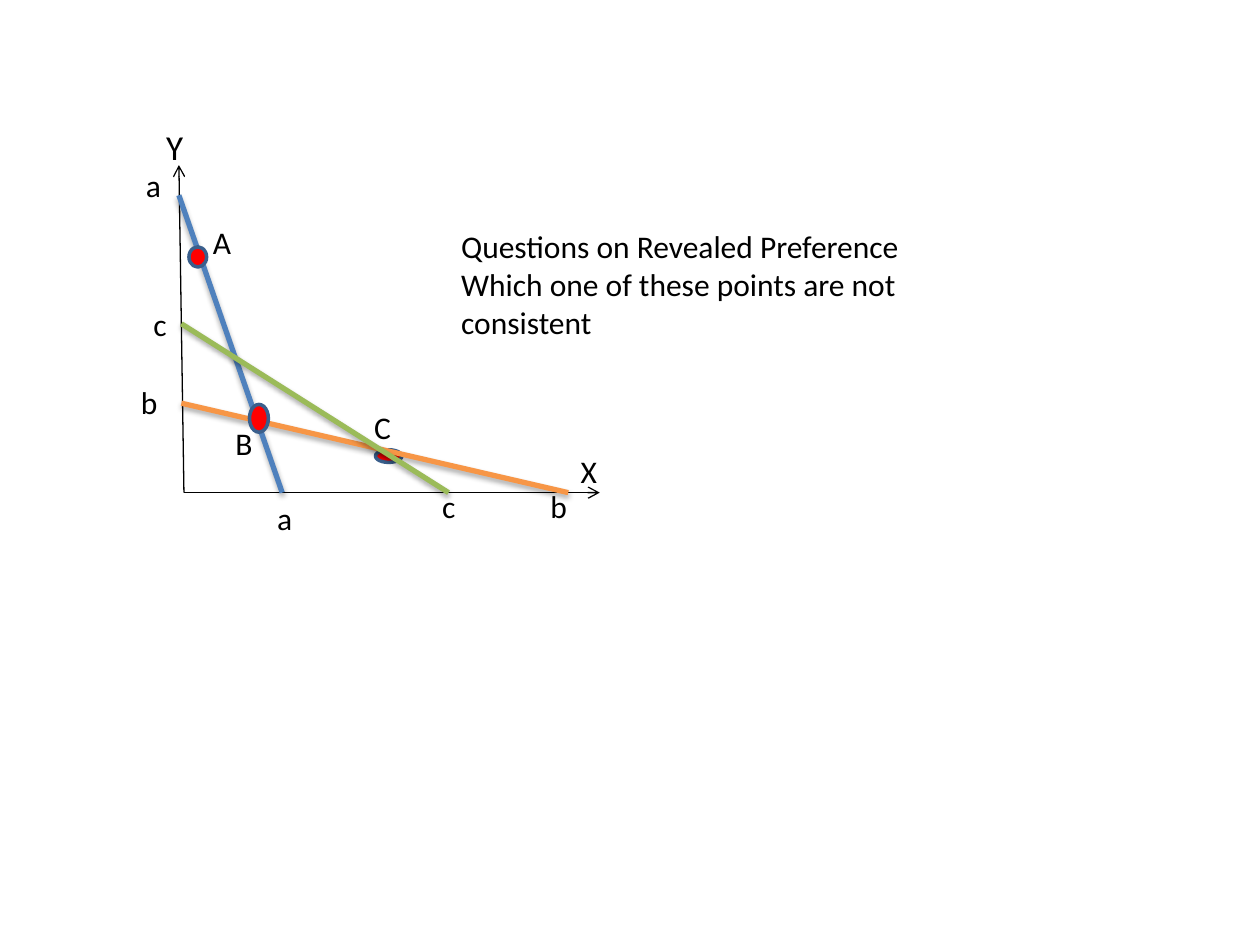
from lxml import etree
from pptx import Presentation
from pptx.dml.color import RGBColor
from pptx.enum.shapes import MSO_CONNECTOR, MSO_SHAPE
from pptx.enum.text import MSO_ANCHOR, MSO_AUTO_SIZE, PP_ALIGN
from pptx.oxml.ns import qn
from pptx.util import Inches, Pt

STRAIGHT = MSO_CONNECTOR.STRAIGHT
OVAL = MSO_SHAPE.OVAL
MIDDLE = MSO_ANCHOR.MIDDLE
NO_AUTOFIT = MSO_AUTO_SIZE.NONE
LEFT = PP_ALIGN.LEFT

FONT = "Calibri"
BLACK = "000000"
RED = "FF0000"
DOT_OUTLINE = "3A5F8C"

# Positions on the graph are inches from its top-left corner
BASE = 2.96
ORIGIN = (0.46, BASE)
AXIS_TIPS = [(0.42, 0.36), (3.76, BASE)]
BUDGET_LINES = [  # start, end, colour
    ((0.42, 0.6), (1.24, BASE), "4F81BD"),
    ((0.44, 2.25), (3.51, BASE), "F79646"),
    ((0.44, 1.62), (2.56, BASE), "9BBB59"),
]
POINT_A = (0.5, 1.01, 0.14, 0.16)
POINT_B = (0.98, 2.26, 0.15, 0.22)
POINT_C = (1.98, 2.62, 0.21, 0.1)
LABELS = [  # text, left, top, width, size
    ("Y", 0.22, 0, 0.55, 20),
    ("X", 3.51, 2.59, 0.51, 18),
    ("A", 0.59, 0.77, 0.55, 18),
    ("B", 0.77, 2.37, 0.41, 18),
    ("C", 1.87, 2.24, 0.55, 18),
    ("a", 0.06, 0.32, 0.31, 18),
    ("a", 1.1, BASE, 0.31, 18),
    ("b", 0.02, 2.04, 0.63, 18),
    ("b", 3.27, 2.87, 0.47, 18),
    ("c", 0.12, 1.42, 0.47, 18),
    ("c", 2.41, 2.87, 0.31, 18),
]


def colour(hex_text):
    return RGBColor.from_string(hex_text)


def style_text(para, size):
    para.alignment = LEFT
    para.font.name = FONT
    para.font.size = Pt(size)
    para.font.color.rgb = colour(BLACK)


def add_line(page, box, start, end, hex_text, width):
    left, top = box
    line = page.shapes.add_connector(
        STRAIGHT,
        Inches(left + start[0]), Inches(top + start[1]),
        Inches(left + end[0]), Inches(top + end[1]))
    line.line.color.rgb = colour(hex_text)
    line.line.width = Pt(width)
    effects = etree.SubElement(line._element.spPr, qn("a:effectLst"))
    return line, effects


def add_axis(page, box, tip):
    axis, _ = add_line(page, box, ORIGIN, tip, BLACK, 0.75)
    etree.SubElement(axis.line._get_or_add_ln(), qn("a:tailEnd"), type="arrow")


def add_budget_line(page, box, start, end, hex_text):
    _, effects = add_line(page, box, start, end, hex_text, 3)
    shadow = etree.SubElement(
        effects, qn("a:outerShdw"), blurRad=str(Pt(3.1)), dist=str(Pt(1.8)),
        dir="5400000", rotWithShape="0")
    shade = etree.SubElement(shadow, qn("a:srgbClr"), val=BLACK)
    etree.SubElement(shade, qn("a:alpha"), val="35000")


def add_dot(page, box, place):
    x, y, width, height = place
    dot = page.shapes.add_shape(
        OVAL, Inches(box[0] + x), Inches(box[1] + y),
        Inches(width), Inches(height))
    dot.shadow.inherit = False
    dot.fill.solid()
    dot.fill.fore_color.rgb = colour(RED)
    dot.line.color.rgb = colour(DOT_OUTLINE)
    dot.line.width = Pt(2)


def add_label(page, box, text, x, y, width, size):
    label = page.shapes.add_textbox(
        Inches(box[0] + x), Inches(box[1] + y), Inches(width), Inches(0.4))
    label.text_frame.word_wrap = True
    label.text_frame.text = text
    style_text(label.text_frame.paragraphs[0], size)


def add_graph(page, box):
    for tip in AXIS_TIPS:
        add_axis(page, box, tip)
    # Point C lies behind the budget lines, A and B in front
    add_dot(page, box, POINT_C)
    for budget_line in BUDGET_LINES:
        add_budget_line(page, box, *budget_line)
    for point in (POINT_A, POINT_B):
        add_dot(page, box, point)
    for label in LABELS:
        add_label(page, box, *label)


def add_question(page, left, top, width, height):
    title = page.shapes.title
    title.left, title.top = Inches(left), Inches(top)
    title.width, title.height = Inches(width), Inches(height)
    frame = title.text_frame
    frame.auto_size = NO_AUTOFIT
    frame.word_wrap = True
    frame.vertical_anchor = MIDDLE
    frame.text = ("Questions on Revealed Preference\v"
                  "Which one of these points are not consistent")
    style_text(frame.paragraphs[0], 18)


def main():
    deck = Presentation()
    deck.slide_width, deck.slide_height = Inches(10), Inches(7.5)
    page = deck.slides.add_slide(deck.slide_layouts.get_by_name("Title Only"))
    add_question(page, 3.56, 1.9, 4.33, 0.71)
    add_graph(page, (1, 0.95))
    deck.save("out.pptx")


if __name__ == "__main__":
    main()
